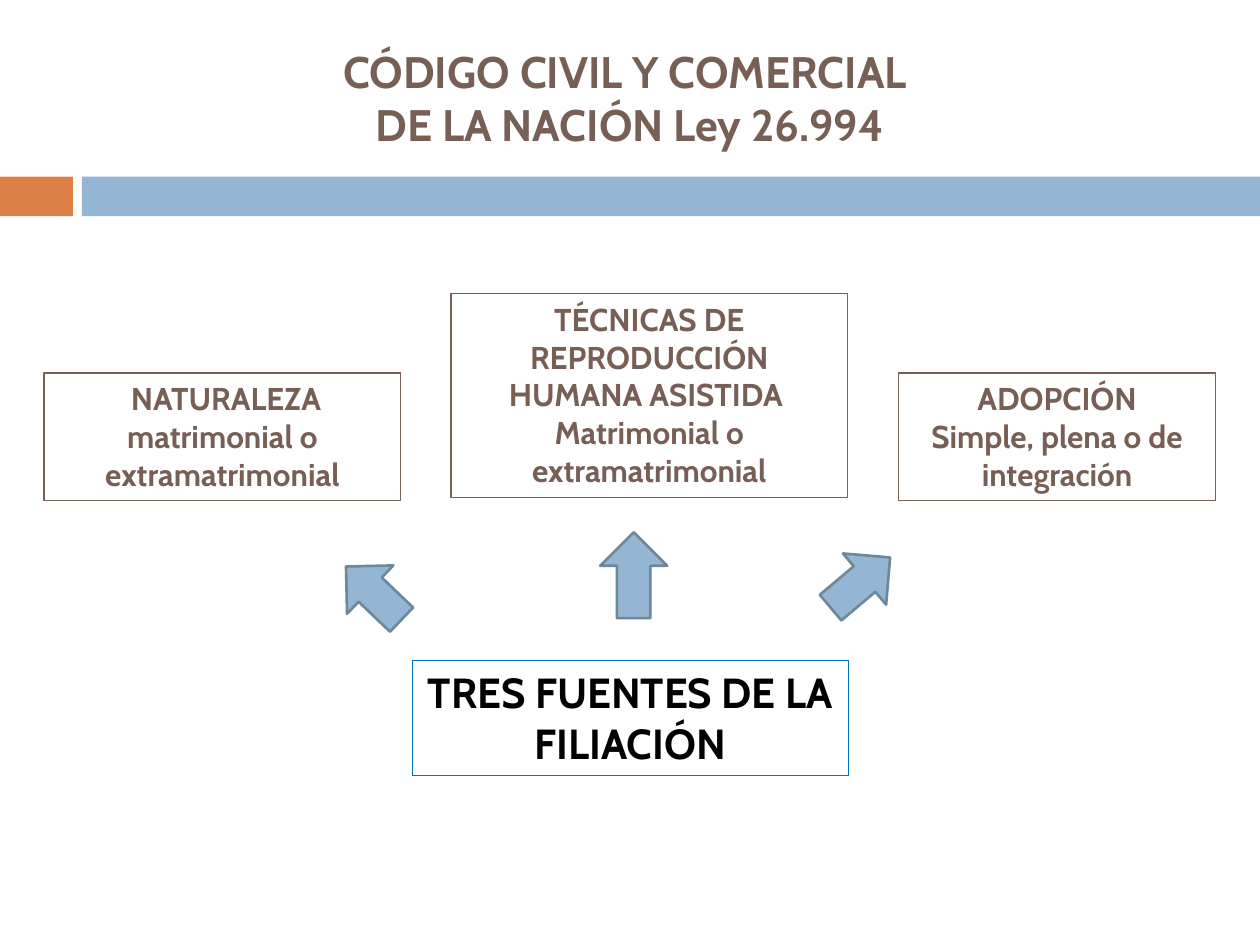
from dataclasses import dataclass

import pptx
import pptx.dml.color
import pptx.enum.shapes
import pptx.enum.text
import pptx.util

Cm = pptx.util.Cm
Pt = pptx.util.Pt
Shapes = pptx.enum.shapes.MSO_SHAPE
Anchor = pptx.enum.text.MSO_ANCHOR
AutoSize = pptx.enum.text.MSO_AUTO_SIZE


@dataclass(frozen=True)
class Theme:
    font: str = "Cabin"
    brown: str = "775F55"
    orange: str = "DD8047"
    blue: str = "94B6D2"
    arrow_edge: str = "6D879B"
    root_edge: str = "0070C0"
    white: str = "FFFFFF"
    black: str = "000000"
    title_size: float = 25.2
    root_size: float = 24
    source_size: float = 18
    thin: float = 0.75
    thick: float = 1.5


@dataclass(frozen=True)
class Box:
    """A rectangle in centimetres."""
    left: float
    top: float
    width: float
    height: float

    def inner(self, left, top, width, height):
        return Box(self.left + left, self.top + top, width, height)

    def place(self, shape):
        shape.left, shape.top = Cm(self.left), Cm(self.top)
        shape.width, shape.height = Cm(self.width), Cm(self.height)


THEME = Theme()


def rgb(value):
    return pptx.dml.color.RGBColor.from_string(value)


def write_text(shape, paragraphs, *, size, color, anchor=Anchor.TOP, auto_size=AutoSize.NONE):
    frame = shape.text_frame
    frame.word_wrap = True
    frame.auto_size = auto_size
    frame.vertical_anchor = anchor
    frame.text = "\n".join(paragraphs)
    for para in frame.paragraphs:
        para.alignment = pptx.enum.text.PP_ALIGN.CENTER
        for span in para.runs:
            span.font.name = THEME.font
            span.font.size = Pt(size)
            span.font.bold = True
            span.font.color.rgb = rgb(color)


def add_figure(page, kind, box, *, fill=None, line=None, weight=THEME.thin, rotation=0):
    shape = page.shapes.add_shape(
        kind, Cm(box.left), Cm(box.top), Cm(box.width), Cm(box.height))
    shape.shadow.inherit = False
    shape.rotation = rotation
    if fill:
        shape.fill.solid()
        shape.fill.fore_color.rgb = rgb(fill)
    else:
        shape.fill.background()
    if line:
        shape.line.color.rgb = rgb(line)
        shape.line.width = Pt(weight)
    else:
        shape.line.fill.background()
    return shape


def add_header(page, box):
    """Place the title and the two-colour band that closes the header."""
    title = page.shapes.title
    box.inner(0, 0.74, box.width, 2.46).place(title)
    write_text(title, ["CÓDIGO CIVIL Y COMERCIAL \vDE LA NACIÓN Ley 26.994"],
               size=THEME.title_size, color=THEME.brown, anchor=Anchor.MIDDLE)
    band_height, accent_width, band_left = 0.8, 1.47, 1.65
    band_top = box.height - band_height
    add_figure(page, Shapes.RECTANGLE,
               box.inner(0, band_top, accent_width, band_height), fill=THEME.orange)
    add_figure(page, Shapes.RECTANGLE,
               box.inner(band_left, band_top, box.width - band_left, band_height),
               fill=THEME.blue)


def add_sources(page, box):
    """Place the three sources of filiation."""
    sources = [
        (0, 1.6, 7.19, 2.57, [" NATURALEZA matrimonial o extramatrimonial"]),
        (8.2, 0, 8, 4.11, ["TÉCNICAS DE REPRODUCCIÓN HUMANA ASISTIDA ",
                           "Matrimonial o extramatrimonial"]),
        (17.22, 1.6, 6.4, 2.57, ["ADOPCIÓN", "Simple, plena o de integración"]),
    ]
    for *position, paragraphs in sources:
        shape = add_figure(page, Shapes.RECTANGLE, box.inner(*position), line=THEME.brown)
        write_text(shape, paragraphs, size=THEME.source_size, color=THEME.brown,
                   auto_size=AutoSize.SHAPE_TO_FIT_TEXT)


def add_arrows(page, box):
    arrow_height = 1.35
    arrows = [(0, 0.36, 1.55, 223.7), (5.15, 0, 1.73, 270), (9.8, 0.15, 1.57, 319.9)]
    for left, top, width, rotation in arrows:
        add_figure(page, Shapes.RIGHT_ARROW, box.inner(left, top, width, arrow_height),
                   fill=THEME.blue, line=THEME.arrow_edge, weight=THEME.thick,
                   rotation=rotation)


def add_root(page, box):
    shape = add_figure(page, Shapes.RECTANGLE, box, fill=THEME.white, line=THEME.root_edge)
    write_text(shape, ["TRES FUENTES DE LA FILIACIÓN"], size=THEME.root_size,
               color=THEME.black, auto_size=AutoSize.SHAPE_TO_FIT_TEXT)


def main():
    deck = pptx.Presentation()
    deck.slide_width, deck.slide_height = Cm(25.4), Cm(19.05)
    page = deck.slides.add_slide(deck.slide_layouts.get_by_name("Title Only"))
    add_header(page, Box(0, 0, 25.4, 4.36))
    add_sources(page, Box(0.89, 5.92, 23.62, 4.17))
    add_arrows(page, Box(6.76, 10.92, 11.37, 1.71))
    add_root(page, Box(8.31, 13.32, 8.79, 2.31))
    deck.save("out.pptx")


if __name__ == "__main__":
    main()
